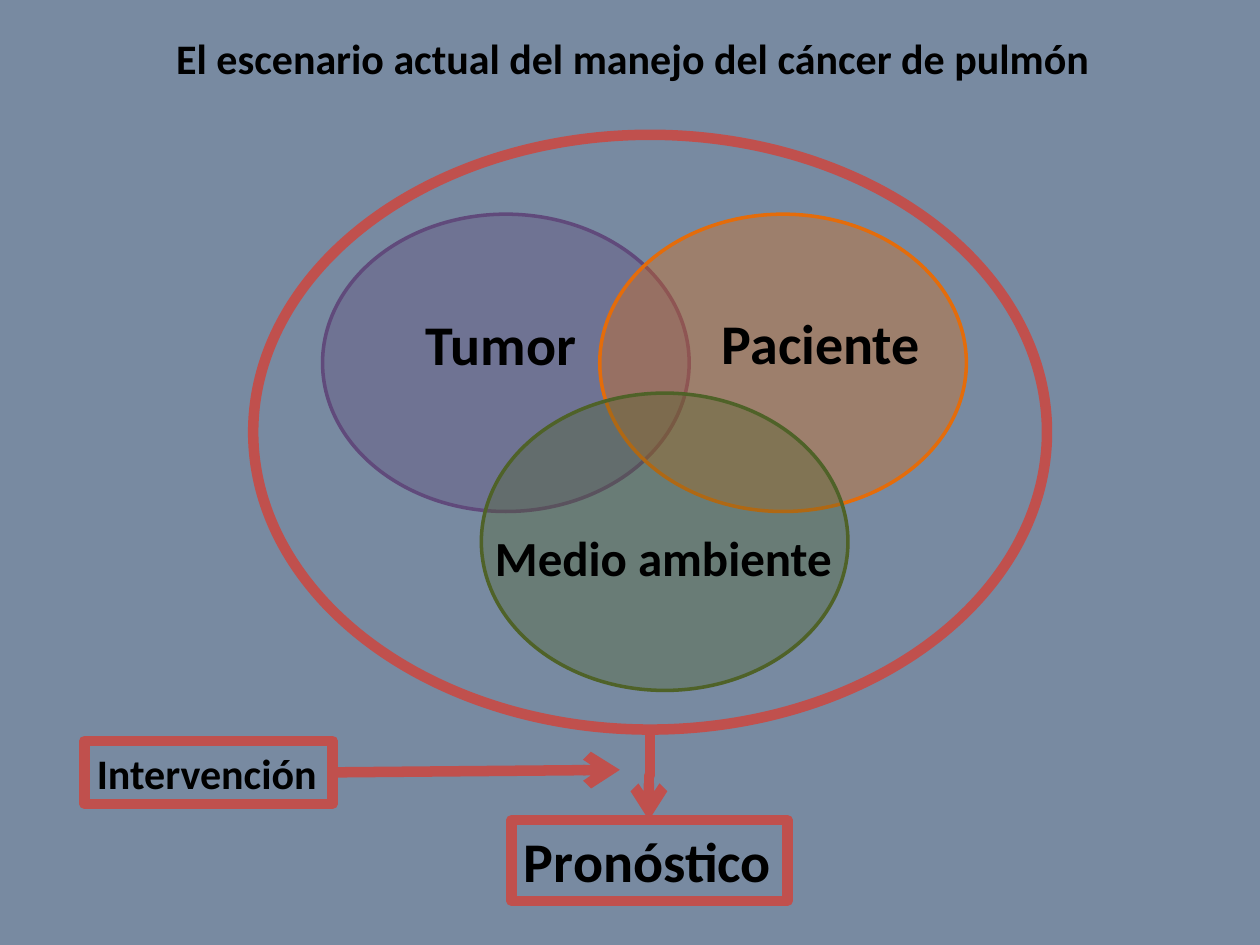
from dataclasses import dataclass

from lxml import etree
from pptx import Presentation
from pptx.dml.color import RGBColor
from pptx.enum.shapes import MSO_CONNECTOR, MSO_SHAPE
from pptx.enum.text import MSO_ANCHOR, MSO_AUTO_SIZE, PP_ALIGN
from pptx.oxml.ns import qn
from pptx.util import Inches, Pt

ELLIPSE = MSO_SHAPE.OVAL
STRAIGHT = MSO_CONNECTOR.STRAIGHT
ELBOW = MSO_CONNECTOR.ELBOW
TOP = MSO_ANCHOR.TOP
LEFT = PP_ALIGN.LEFT
FIT_SHAPE = MSO_AUTO_SIZE.SHAPE_TO_FIT_TEXT

COLUMNS, ROWS = 100, 75
WIDTH, HEIGHT = Inches(10), Inches(7.5)
RIGHT_SIDE = 3
QUARTER_TURN = 90 * 60000


@dataclass(frozen=True)
class Theme:
    font: str = "Calibri"
    ink: str = "000000"
    backdrop: str = "17375E"
    tumor: str = "604A7B"
    patient: str = "E46C0A"
    environment: str = "4F6228"
    accent: str = "C0504D"
    backdrop_opacity: int = 58
    circle_opacity: int = 35
    small: int = 24
    medium: int = 28
    large: int = 32
    thin: int = 2
    thick: int = 6


THEME = Theme()


def across(columns):
    return round(WIDTH * columns / COLUMNS)


def down(rows):
    return round(HEIGHT * rows / ROWS)


def place(left, top, width, height):
    return across(left), down(top), across(width), down(height)


def paint(fill, color):
    fill.solid()
    fill.fore_color.rgb = RGBColor.from_string(color)


def set_opacity(parent, percent):
    color = next(parent.iter(qn("a:srgbClr")))
    etree.SubElement(color, qn("a:alpha")).set("val", str(percent * 1000))


def stroke(line, color, weight):
    paint(line.fill, color)
    line.width = Pt(weight)


def add_backdrop(page):
    paint(page.background.fill, THEME.backdrop)
    set_opacity(page.element, THEME.backdrop_opacity)


def add_ellipse(page, area, color, weight, opacity=None):
    ellipse = page.shapes.add_shape(ELLIPSE, *place(*area))
    ellipse.shadow.inherit = False
    if opacity is None:
        ellipse.fill.background()
    else:
        paint(ellipse.fill, color)
        set_opacity(ellipse.element, opacity)
    stroke(ellipse.line, color, weight)


def add_label(page, text, area, size, framed=False):
    box = page.shapes.add_textbox(*place(*area))
    frame = box.text_frame
    frame.text = text
    frame.word_wrap = False
    frame.auto_size = FIT_SHAPE
    frame.vertical_anchor = TOP
    para = frame.paragraphs[0]
    para.alignment = LEFT
    font = para.runs[0].font
    font.name, font.size, font.bold = THEME.font, Pt(size), True
    font.color.rgb = RGBColor.from_string(THEME.ink)
    if framed:
        stroke(box.line, THEME.accent, THEME.thick)
    return box


def add_arrow(page, kind, start, end):
    arrow = page.shapes.add_connector(
        kind, across(start[0]), down(start[1]), across(end[0]), down(end[1])
    )
    stroke(arrow.line, THEME.accent, THEME.thick)
    properties = arrow.element.spPr
    etree.SubElement(properties.find(qn("a:ln")), qn("a:tailEnd")).set("type", "arrow")
    etree.SubElement(properties, qn("a:effectLst"))
    return arrow


def add_downward_elbow(page, start, end):
    middle_x, middle_y = (start[0] + end[0]) / 2, (start[1] + end[1]) / 2
    half_run, half_shift = (end[1] - start[1]) / 2, (start[0] - end[0]) / 2
    elbow = add_arrow(
        page,
        ELBOW,
        (middle_x - half_run, middle_y - half_shift),
        (middle_x + half_run, middle_y + half_shift),
    )
    elbow.element.spPr.find(qn("a:xfrm")).set("rot", str(QUARTER_TURN))


def add_venn(page):
    circles = [
        (25.6, 17, THEME.tumor),
        (47.6, 17, THEME.patient),
        (38.2, 31.2, THEME.environment),
    ]
    for left, top, color in circles:
        area = (left, top, 29.1, 23.6)
        add_ellipse(page, area, color, THEME.thin, THEME.circle_opacity)
    add_label(page, "Tumor", (32.8, 24.1, 14.1, 6.4), THEME.large)
    add_label(page, "Paciente", (56.3, 24, 17.9, 6.4), THEME.large)
    add_label(page, "Medio ambiente", (38.3, 41.4, 29.1, 5.7), THEME.medium)
    add_ellipse(page, (20.1, 10.7, 63, 47.2), THEME.accent, THEME.thick)


def add_outcome(page):
    add_downward_elbow(page, (51.6, 58), (51.5, 65.1))
    add_label(page, "Pronóstico", (40.6, 65.1, 21.9, 6.4), THEME.large, framed=True)
    intervention = add_label(
        page, "Intervención", (6.7, 58.8, 19.7, 5), THEME.small, framed=True
    )
    arrow = add_arrow(page, STRAIGHT, (26.4, 61.3), (49.2, 61.1))
    arrow.begin_connect(intervention, RIGHT_SIDE)


def main():
    deck = Presentation()
    deck.slide_width, deck.slide_height = WIDTH, HEIGHT
    page = deck.slides.add_slide(deck.slide_layouts[6])
    add_backdrop(page)
    add_label(
        page,
        "El escenario actual del manejo del cáncer de pulmón",
        (13, 2.1, 75.2, 5),
        THEME.small,
    )
    add_venn(page)
    add_outcome(page)
    deck.save("out.pptx")


if __name__ == "__main__":
    main()
